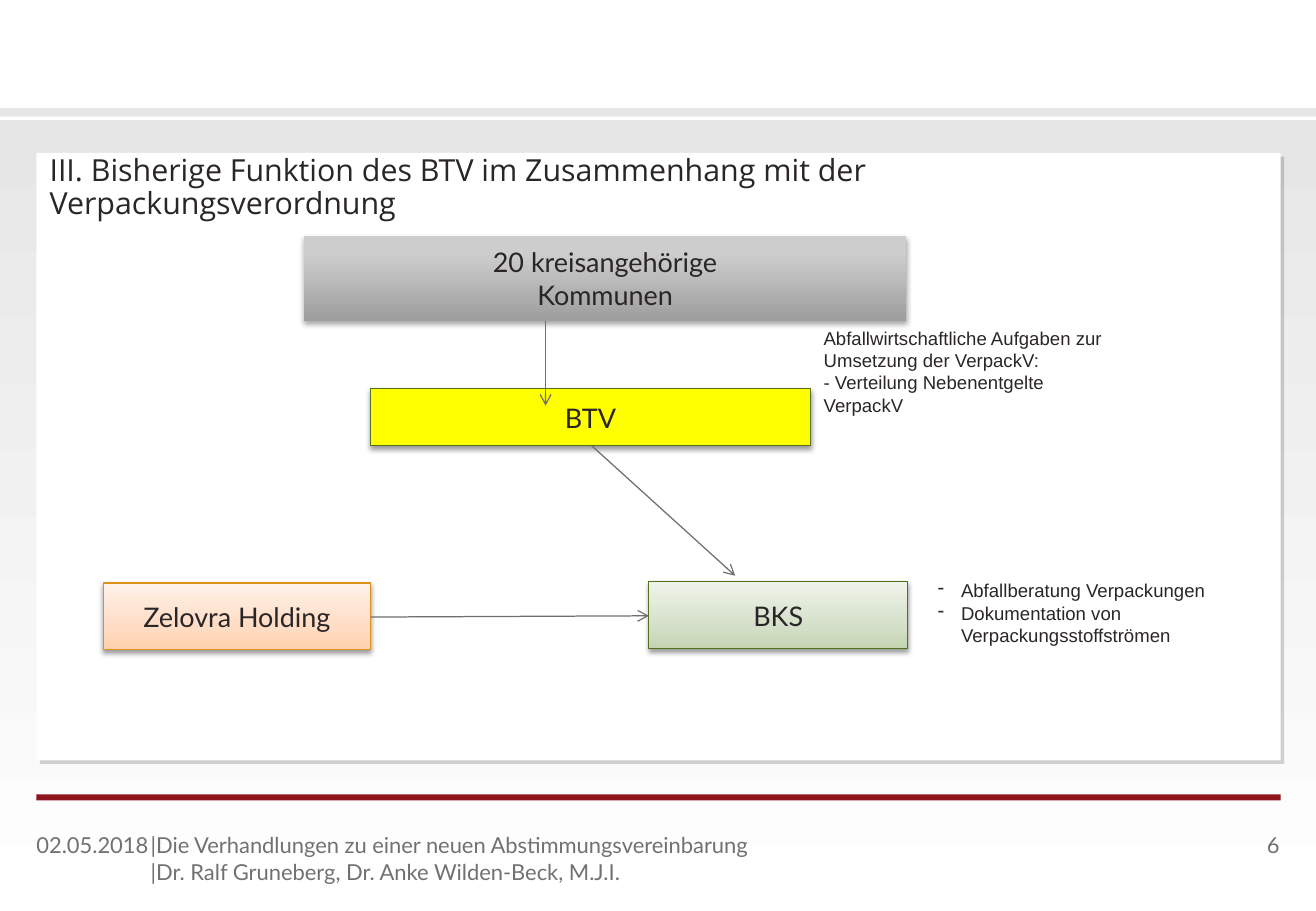
"""Build the slide on the role of the BTV under the packaging ordinance."""
from dataclasses import dataclass
from typing import Optional

from lxml.etree import SubElement
from pptx import Presentation
from pptx.dml.color import RGBColor
from pptx.enum.shapes import MSO_CONNECTOR, MSO_SHAPE
from pptx.enum.text import MSO_ANCHOR, PP_ALIGN
from pptx.oxml.ns import qn
from pptx.util import Inches, Pt

DARK = "2A2526"
FOOTER_GRAY = "737072"
ARROW_GRAY = "716D70"
GREEN = "53701B"


@dataclass(frozen=True)
class Shadow:
    color: str
    opacity: int
    blur: float
    distance: float
    angle: int


@dataclass(frozen=True)
class Box:
    left: float
    top: float
    width: float
    height: float
    stops: tuple[tuple[int, str], ...]
    angle: int = 270
    line: Optional[str] = None
    shadow: Optional[Shadow] = None
    text: str = ""


@dataclass(frozen=True)
class Label:
    left: float
    top: float
    width: float
    height: float
    text: str
    size: int
    font: str
    color: str = DARK
    inset: bool = True
    align: PP_ALIGN = PP_ALIGN.LEFT
    spacing: float = 1.0
    bullet: str = ""


@dataclass(frozen=True)
class Arrow:
    start: tuple[float, float]
    end: tuple[float, float]


PANEL_SHADOW = Shadow(DARK, 20, 0, 3, 45)
BOX_SHADOW = Shadow("000000", 38, 3.1, 1.6, 90)

BOXES = [
    Box(0, 0.99, 10.83, 6.51, ((0, "E6E6E6"), (100, "FFFFFF")), angle=90),
    Box(0, 0.89, 10.83, 0.07, ((0, "E6E6E6"),)),
    Box(0.3, 1.26, 10.24, 5, ((0, "FFFFFF"),), shadow=PANEL_SHADOW),
    Box(0.3, 6.54, 10.24, 0.05, ((0, "8E141E"),)),
    Box(0.85, 4.8, 2.2, 0.55, ((0, "FFD0AD"), (35, "FFDDC5"), (100, "FFF2E9")),
        line="DC9119", shadow=BOX_SHADOW, text="Zelovra Holding"),
    Box(3.05, 3.2, 3.62, 0.47, ((0, "FFFF00"),),
        line=GREEN, shadow=BOX_SHADOW, text="BTV"),
    Box(2.5, 1.94, 4.96, 0.7, ((0, "9E9E9E"), (80, "CDCDCD"), (100, "CECECE")),
        shadow=Shadow("000000", 35, 3.1, 1.8, 90),
        text="20 kreisangehörige\nKommunen"),
    Box(5.34, 4.79, 2.13, 0.55, ((0, "C3D4B2"), (35, "D5E0CA"), (100, "EFF4EA")),
        line=GREEN, shadow=BOX_SHADOW, text="BKS"),
]

LABELS = [
    Label(0.31, 1.23, 9.64, 0.58,
          "III. Bisherige Funktion des BTV im Zusammenhang mit der Verpackungsverordnung",
          18, "Open Sans", spacing=0.9),
    Label(6.68, 2.64, 2.6, 0.84,
          "Abfallwirtschaftliche Aufgaben zur Umsetzung der VerpackV:\n"
          "- Verteilung Nebenentgelte VerpackV", 11, "Arial"),
    Label(7.62, 4.72, 2.52, 0.66,
          "Abfallberatung Verpackungen\nDokumentation von Verpackungsstoffströmen",
          11, "Arial", bullet="-"),
    Label(0.3, 6.85, 0.95, 0.47, "02.05.2018", 13, "Lato", FOOTER_GRAY, inset=False),
    Label(1.24, 6.85, 8.51, 0.47,
          "|Die Verhandlungen zu einer neuen Abstimmungsvereinbarung\n"
          "|Dr. Ralf Gruneberg, Dr. Anke Wilden-Beck, M.J.I.",
          13, "Lato", FOOTER_GRAY, inset=False),
    Label(9.9, 6.85, 0.63, 0.47, "6", 13, "Lato", FOOTER_GRAY,
          inset=False, align=PP_ALIGN.RIGHT),
]

ARROWS = [
    Arrow((3.05, 5.08), (5.34, 5.07)),
    Arrow((4.49, 2.64), (4.49, 3.34)),
    Arrow((4.87, 3.67), (6.05, 4.74)),
]


def rgb(color: str) -> RGBColor:
    return RGBColor.from_string(color)


def format_runs(paragraph, size: int, font: str, color: str) -> None:
    for run in paragraph.runs:
        run.font.size = Pt(size)
        run.font.name = font
        run.font.color.rgb = rgb(color)


def set_fill(shape, stops: tuple[tuple[int, str], ...], angle: int) -> None:
    if len(stops) == 1:
        shape.fill.solid()
        shape.fill.fore_color.rgb = rgb(stops[0][1])
        return
    shape.fill.gradient()
    gradient = shape._element.spPr.find(qn("a:gradFill"))
    gradient.clear()
    stop_list = SubElement(gradient, qn("a:gsLst"))
    for position, color in stops:
        stop = SubElement(stop_list, qn("a:gs"), pos=str(position * 1000))
        SubElement(stop, qn("a:srgbClr"), val=color)
    SubElement(gradient, qn("a:lin"), ang=str(angle * 60000), scaled="0")


def set_shadow(shape, shadow: Optional[Shadow]) -> None:
    shape.shadow.inherit = False
    if shadow is None:
        return
    effects = shape._element.spPr.find(qn("a:effectLst"))
    outer = SubElement(effects, qn("a:outerShdw"), blurRad=str(Pt(shadow.blur)),
                       dist=str(Pt(shadow.distance)), dir=str(shadow.angle * 60000),
                       algn="ctr", rotWithShape="0")
    color = SubElement(outer, qn("a:srgbClr"), val=shadow.color)
    SubElement(color, qn("a:alpha"), val=str(shadow.opacity * 1000))


def draw_box(slide, box: Box) -> None:
    shape = slide.shapes.add_shape(
        MSO_SHAPE.RECTANGLE, Inches(box.left), Inches(box.top),
        Inches(box.width), Inches(box.height))
    set_fill(shape, box.stops, box.angle)
    if box.line:
        shape.line.color.rgb = rgb(box.line)
        shape.line.width = Pt(0.75)
    else:
        shape.line.fill.background()
    set_shadow(shape, box.shadow)
    if box.text:
        text_frame = shape.text_frame
        text_frame.text = box.text
        text_frame.word_wrap = False
        text_frame.vertical_anchor = MSO_ANCHOR.MIDDLE
        for paragraph in text_frame.paragraphs:
            paragraph.alignment = PP_ALIGN.CENTER
            format_runs(paragraph, 16, "Lato", DARK)


def draw_label(slide, label: Label) -> None:
    text_frame = slide.shapes.add_textbox(
        Inches(label.left), Inches(label.top),
        Inches(label.width), Inches(label.height)).text_frame
    text_frame.word_wrap = True
    if not label.inset:
        text_frame.margin_left = text_frame.margin_right = 0
        text_frame.margin_top = text_frame.margin_bottom = 0
    text_frame.text = label.text
    for paragraph in text_frame.paragraphs:
        paragraph.alignment = label.align
        paragraph.line_spacing = label.spacing
        if label.bullet:
            properties = paragraph._p.get_or_add_pPr()
            properties.set("marL", str(Inches(0.19)))
            properties.set("indent", str(-Inches(0.19)))
            SubElement(properties, qn("a:buChar"), char=label.bullet)
        format_runs(paragraph, label.size, label.font, label.color)


def draw_arrow(slide, arrow: Arrow) -> None:
    connector = slide.shapes.add_connector(
        MSO_CONNECTOR.STRAIGHT, *map(Inches, arrow.start + arrow.end))
    connector.line.color.rgb = rgb(ARROW_GRAY)
    connector.line.width = Pt(0.75)
    SubElement(connector.line._get_or_add_ln(), qn("a:tailEnd"), type="arrow")
    SubElement(connector._element.spPr, qn("a:effectLst"))


def main() -> None:
    presentation = Presentation()
    presentation.slide_width = Inches(10.83)
    presentation.slide_height = Inches(7.5)
    slide = presentation.slides.add_slide(presentation.slide_layouts[6])
    for box in BOXES:
        draw_box(slide, box)
    for label in LABELS:
        draw_label(slide, label)
    for arrow in ARROWS:
        draw_arrow(slide, arrow)
    presentation.save("out.pptx")


if __name__ == "__main__":
    main()
